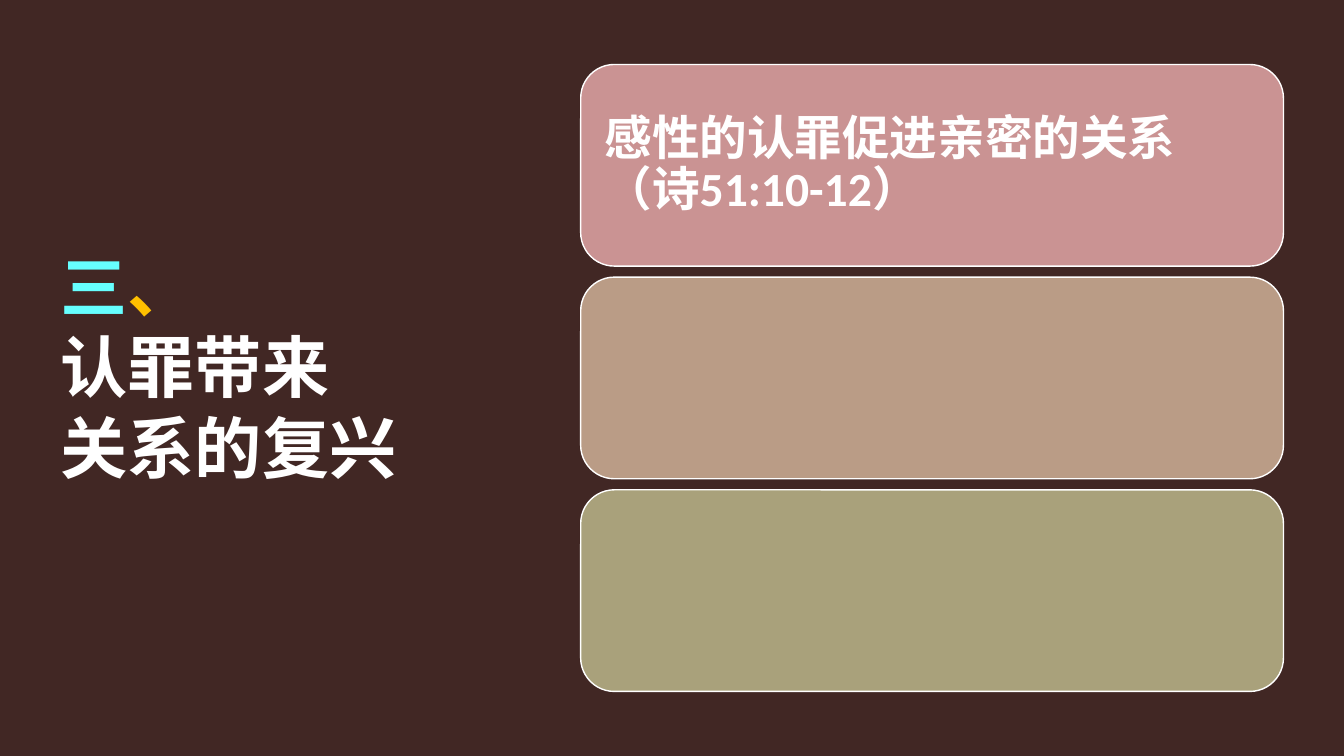
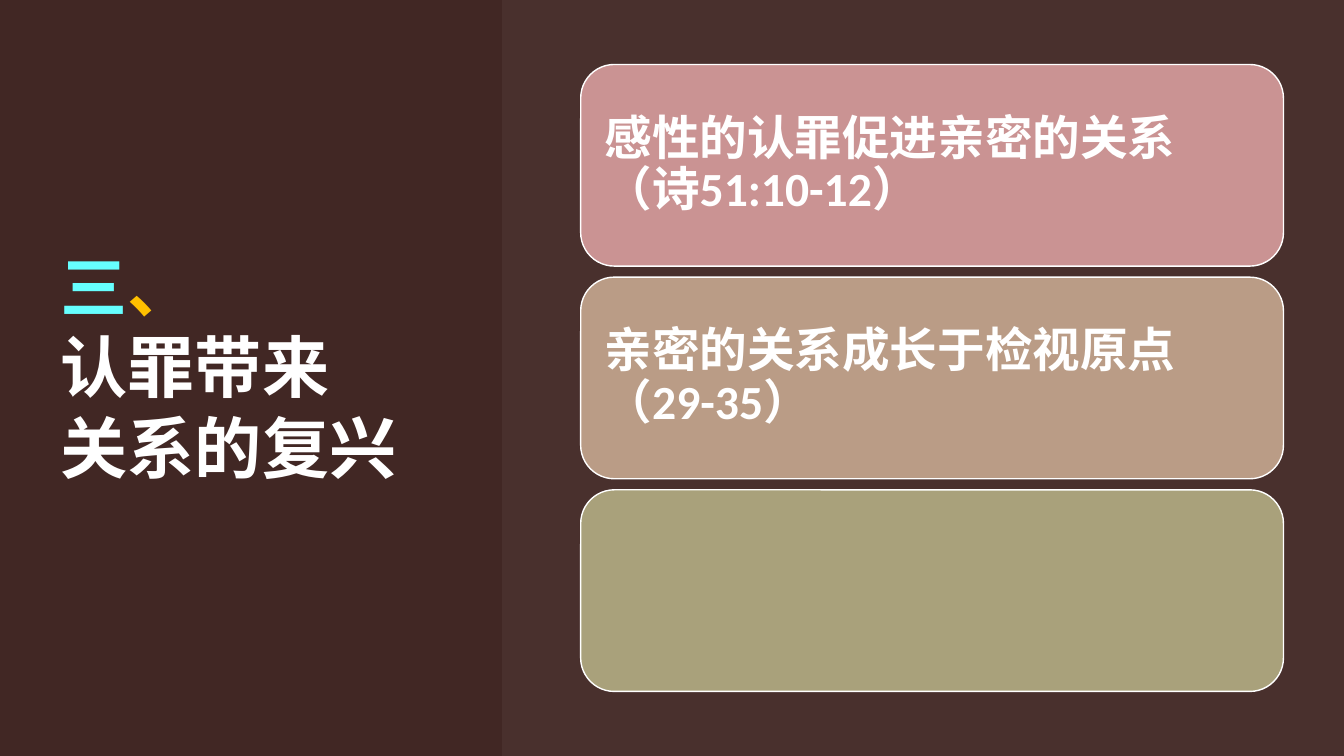
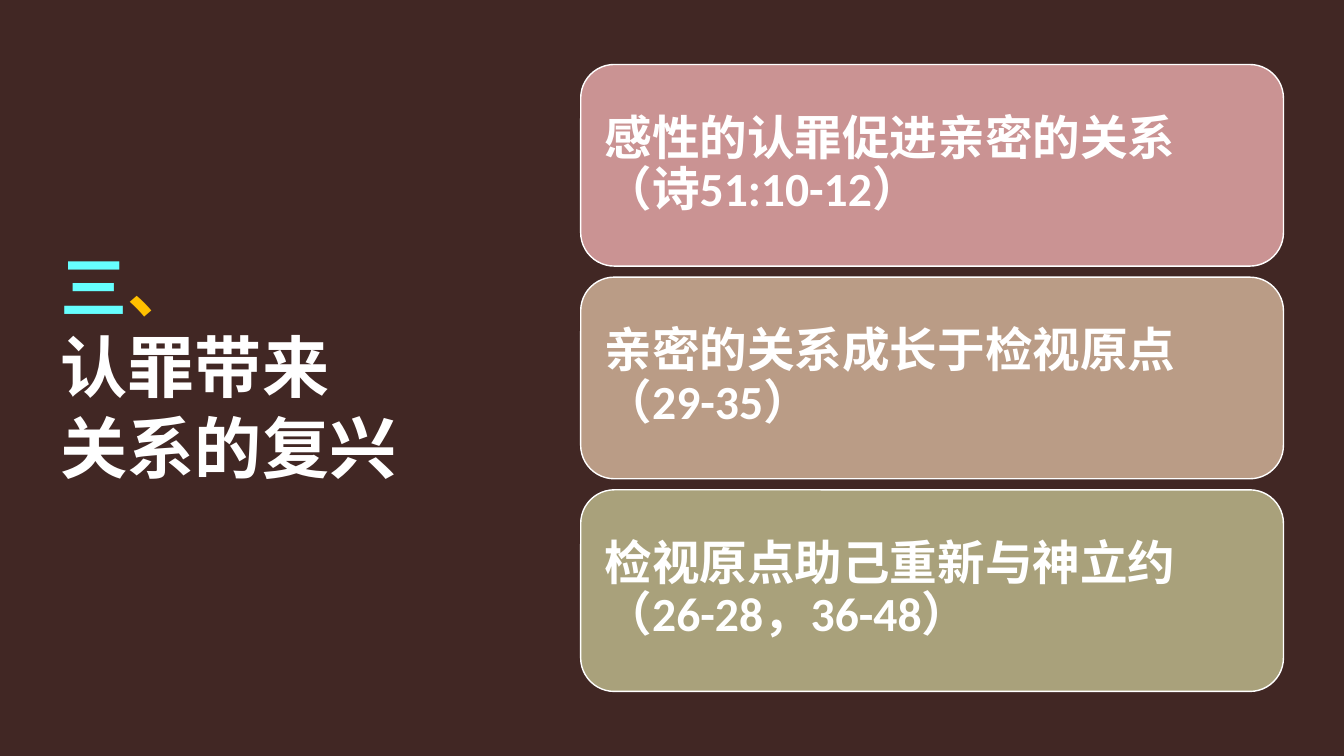
from lxml import etree
from pptx import Presentation
from pptx.dml.color import RGBColor
from pptx.enum.lang import MSO_LANGUAGE_ID as Language
from pptx.enum.shapes import MSO_SHAPE as Shape
from pptx.enum.text import MSO_ANCHOR as Anchor, MSO_AUTO_SIZE as AutoSize, PP_ALIGN as Align
from pptx.oxml.ns import qn
from pptx.util import Inches, Pt

# Shared style
WIDTH, HEIGHT = 13.33, 7.5
FONT = "Calibri"
BROWN = RGBColor(0x41, 0x27, 0x24)
PALE = RGBColor(0xF0, 0xE6, 0xE5)
WHITE = RGBColor(0xFF, 0xFF, 0xFF)
CYAN = RGBColor(0x66, 0xFF, 0xFF)
GOLD = RGBColor(0xFF, 0xC0, 0x00)
ROSE = RGBColor(0xCA, 0x93, 0x93)
TAN = RGBColor(0xBA, 0x9C, 0x86)
OLIVE = RGBColor(0xA9, 0xA1, 0x7B)

# Title lines, each a list of (text, colour)
TITLE = [
    [("三", CYAN), ("、", GOLD)],
    [("认罪带来", WHITE)],
    [("关系的复兴", WHITE)],
]
POINTS = [
    ("感性的认罪促进亲密的关系（诗51:10-12）", ROSE),
    ("亲密的关系成长于检视原点（29-35）", TAN),
    ("检视原点助己重新与神立约（26-28，36-48）", OLIVE),
]

# Column of cards
CARD_LEFT, CARD_TOP = 5.76, 0.64
CARD_WIDTH, CARD_HEIGHT, CARD_GAP = 6.97, 2, 0.11
PANEL_LEFT = 4.98


class Builder:
    def __init__(self):
        self.deck = Presentation()
        self.deck.slide_width = Inches(WIDTH)
        self.deck.slide_height = Inches(HEIGHT)
        fill = self.deck.slide_master.background.fill
        fill.solid()
        fill.fore_color.rgb = BROWN
        self.page = None

    def new_page(self):
        self.page = self.deck.slides.add_slide(self.deck.slide_layouts[5])

    def frame(self, shape, inset):
        """Prepare a left-aligned, vertically centred text frame."""
        frame = shape.text_frame
        frame.word_wrap = True
        frame.auto_size = AutoSize.NONE
        frame.vertical_anchor = Anchor.MIDDLE
        frame.margin_left = frame.margin_right = Inches(inset)
        frame.margin_top = frame.margin_bottom = Inches(inset)
        para = frame.paragraphs[0]
        para.alignment = Align.LEFT
        return para

    def span(self, para, text, size, color):
        span = para.add_run()
        span.text = text
        font = span.font
        font.name, font.size, font.bold = FONT, Pt(size), True
        font.color.rgb = color
        font.language_id = Language.SIMPLIFIED_CHINESE

    def title(self, lines):
        box = self.page.shapes.title
        box.left, box.top = Inches(0.6), Inches(0.6)
        box.width, box.height = Inches(3.9), Inches(6.06)
        para = self.frame(box, 0)
        for number, line in enumerate(lines):
            if number:
                para.add_line_break()
            for text, color in line:
                self.span(para, text, 48, color)

    def block(self, kind, left, top, width, height, color):
        box = self.page.shapes.add_shape(
            kind, Inches(left), Inches(top), Inches(width), Inches(height))
        box.shadow.inherit = False
        box.fill.solid()
        box.fill.fore_color.rgb = color
        box.line.fill.background()
        return box

    def panel(self):
        """Lighten the right side with a 5 % veil."""
        box = self.block(Shape.RECTANGLE, PANEL_LEFT, 0, WIDTH - PANEL_LEFT, HEIGHT, PALE)
        color = box.fill._xPr.find(qn("a:solidFill"))[0]
        etree.SubElement(color, qn("a:alpha")).set("val", "5000")

    def card(self, row, text, color):
        top = CARD_TOP + row * (CARD_HEIGHT + CARD_GAP)
        box = self.block(
            Shape.ROUNDED_RECTANGLE, CARD_LEFT, top, CARD_WIDTH, CARD_HEIGHT, color)
        box.line.color.rgb = WHITE
        box.line.width = Pt(1)
        if text:
            para = self.frame(box, 0.14)
            para.line_spacing = 0.9
            para.space_after = Pt(12)
            self.span(para, text, 34, WHITE)


def main():
    builder = Builder()
    # Each slide reveals one more point
    for shown in range(1, len(POINTS) + 1):
        builder.new_page()
        builder.title(TITLE)
        if shown == 2:
            builder.panel()
        for row, (text, color) in enumerate(POINTS):
            builder.card(row, text if row < shown else "", color)
    builder.deck.save("out.pptx")


if __name__ == "__main__":
    main()
